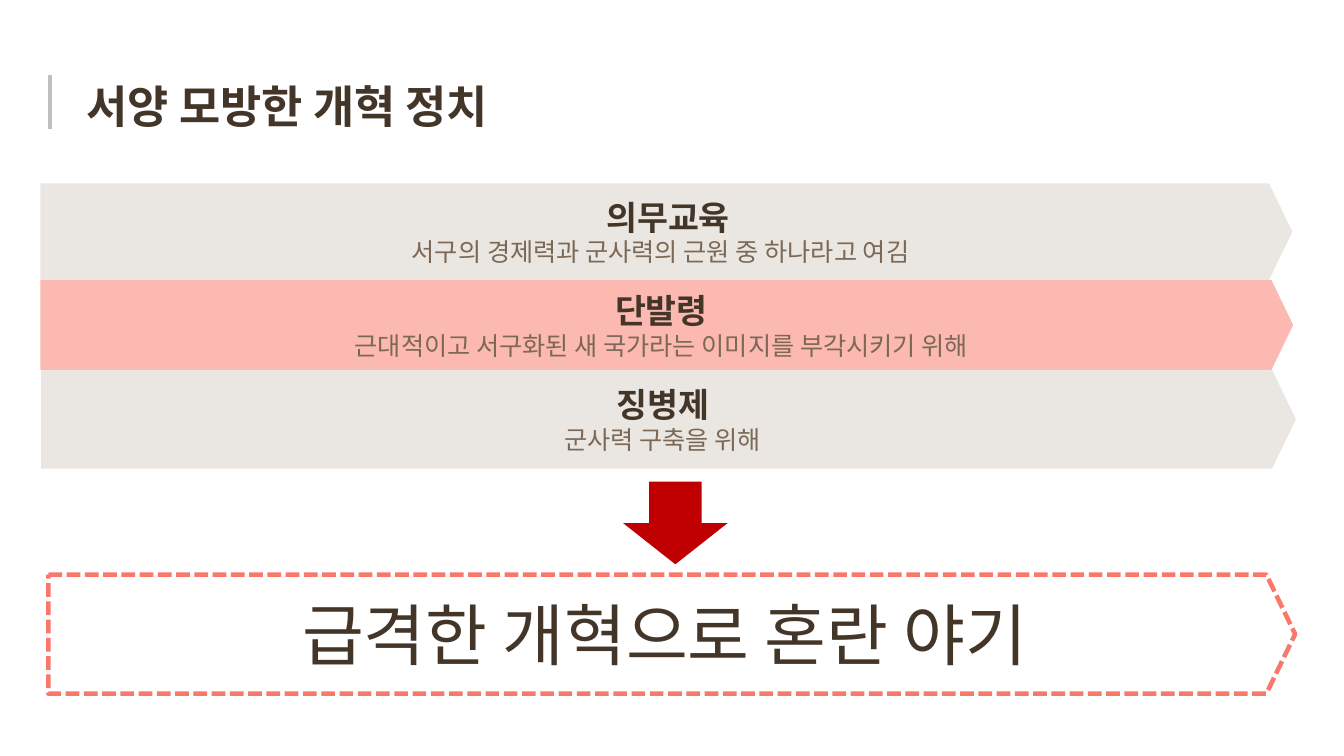
from dataclasses import dataclass

from lxml import etree
from pptx import Presentation
from pptx import util as u
from pptx.dml.color import RGBColor
from pptx.enum import dml, shapes, text
from pptx.oxml import ns

FONT = "Noto Sans CJK KR"
DARK = "433629"
BROWN = "7C6854"
BEIGE = "E7E3DD"
CORAL = "F8796C"
RED = "C00000"
GREY = "BFBFBF"


@dataclass
class Line:
    content: str
    size: float
    color: str
    bold: bool = False
    indent: float = 0


@dataclass
class Band:
    left: float
    width: float
    height: float
    fill: str
    opacity: int
    heading: Line
    detail: Line


BANDS = [
    Band(1.02, 31.55, 2.44, BEIGE, 85,
         Line("의무교육", 24, DARK, True, 0.38),
         Line("서구의 경제력과 군사력의 근원 중 하나라고 여김", 18, BROWN)),
    Band(1.02, 31.57, 2.26, CORAL, 52,
         Line("단발령", 24, DARK, True),
         Line("근대적이고 서구화된 새 국가라는 이미지를 부각시키기 위해", 18, BROWN)),
    Band(1.04, 31.62, 2.49, BEIGE, 85,
         Line("징병제", 24, DARK, True),
         Line("군사력 구축을 위해", 18, BROWN)),
]
BANDS_TOP = 4.62


def rgb(color: str) -> RGBColor:
    return RGBColor.from_string(color)


def write_lines(shape, lines: list[Line], alignment, anchor) -> None:
    frame = shape.text_frame
    frame.word_wrap = True
    frame.vertical_anchor = anchor
    frame.text = "\n".join(line.content for line in lines)
    for paragraph, line in zip(frame.paragraphs, lines):
        paragraph.alignment = alignment
        font = paragraph.font
        font.name = FONT
        font.size = u.Pt(line.size)
        font.bold = line.bold
        font.color.rgb = rgb(line.color)
        properties = paragraph._p.pPr
        if line.indent:
            properties.set("marL", str(u.Cm(line.indent)))
        latin = properties.find(".//" + ns.qn("a:latin"))
        east_asian = etree.Element(ns.qn("a:ea"), typeface=FONT)
        latin.addnext(east_asian)


def add_block(slide, preset, left: float, top: float, width: float, height: float):
    shape = slide.shapes.add_shape(
        preset, u.Cm(left), u.Cm(top), u.Cm(width), u.Cm(height))
    shape.shadow.inherit = False
    return shape


def fill_block(shape, color: str, opacity: int = 100) -> None:
    shape.fill.solid()
    shape.fill.fore_color.rgb = rgb(color)
    shape.line.fill.background()
    if opacity < 100:
        color_element = shape._element.spPr.find(".//" + ns.qn("a:srgbClr"))
        etree.SubElement(color_element, ns.qn("a:alpha"), val=str(opacity * 1000))


def add_pentagon(slide, left: float, top: float, width: float, height: float,
                 lines: list[Line]):
    shape = add_block(slide, shapes.MSO_SHAPE.PENTAGON, left, top, width, height)
    shape.adjustments[0] = 0.242
    write_lines(shape, lines, text.PP_ALIGN.CENTER, text.MSO_ANCHOR.MIDDLE)
    return shape


def add_heading(slide) -> None:
    title = slide.shapes.title
    title.left, title.top = u.Cm(1.93), u.Cm(1.85)
    title.width, title.height = u.Cm(16.05), u.Cm(1.63)
    write_lines(title, [Line("서양 모방한 개혁 정치", 32, DARK, True)],
                text.PP_ALIGN.LEFT, text.MSO_ANCHOR.TOP)
    title.text_frame.auto_size = text.MSO_AUTO_SIZE.NONE
    rule = slide.shapes.add_connector(
        shapes.MSO_CONNECTOR.STRAIGHT, u.Cm(1.27), u.Cm(1.88), u.Cm(1.27), u.Cm(3.25))
    rule.line.color.rgb = rgb(GREY)
    rule.line.width = u.Pt(3)
    etree.SubElement(rule._element.spPr, ns.qn("a:effectLst"))


def add_bands(slide) -> None:
    top = BANDS_TOP
    for band in BANDS:
        shape = add_pentagon(slide, band.left, top, band.width, band.height,
                             [band.heading, band.detail])
        fill_block(shape, band.fill, band.opacity)
        top += band.height


def add_outcome(slide) -> None:
    outcome = add_pentagon(slide, 1.22, 14.48, 31.42, 3,
                           [Line("급격한 개혁으로 혼란 야기", 48, DARK)])
    outcome.fill.background()
    outcome.line.color.rgb = rgb(CORAL)
    outcome.line.width = u.Pt(3.25)
    outcome.line.dash_style = dml.MSO_LINE.SQUARE_DOT
    arrow = add_block(slide, shapes.MSO_SHAPE.DOWN_ARROW, 15.7, 12.14, 2.64, 2.08)
    fill_block(arrow, RED)


def main() -> None:
    presentation = Presentation()
    presentation.slide_width = u.Cm(33.87)
    presentation.slide_height = u.Cm(19.05)
    slide = presentation.slides.add_slide(presentation.slide_layouts[5])
    add_heading(slide)
    add_bands(slide)
    add_outcome(slide)
    presentation.save("out.pptx")


if __name__ == "__main__":
    main()
